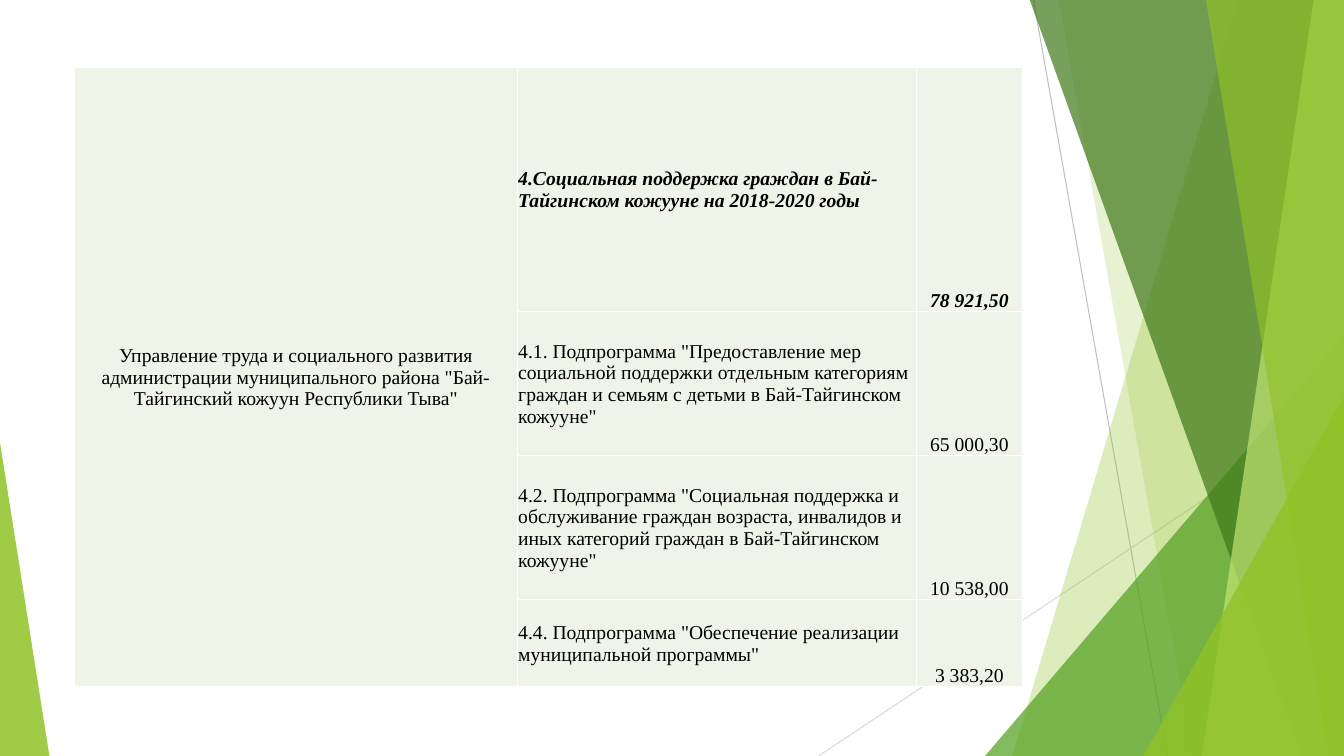
import pptx
import pptx.util
import pptx.dml.color
import pptx.enum.shapes
import pptx.enum.text
import pptx.oxml
import pptx.oxml.ns
from lxml import etree

Inches = pptx.util.Inches
Pt = pptx.util.Pt
RGB = pptx.dml.color.RGBColor.from_string
Anchor = pptx.enum.text.MSO_ANCHOR
Align = pptx.enum.text.PP_ALIGN
qn = pptx.oxml.ns.qn

COLORS = {
    "lime": "90C226", "green": "54A021", "dark": "3F7819", "pale": "C0E474",
    "gray": "BFBFBF", "light": "D9D9D9", "cell": "EEF4E8",
    "white": "FFFFFF", "black": "000000",
}
WIDE, HIGH = 13.33, 7.5

deck = pptx.Presentation()
deck.slide_width, deck.slide_height = Inches(WIDE), Inches(HIGH)
slide = deck.slides.add_slide(deck.slide_layouts[6])
shapes = slide.shapes


def paint(shape, color, alpha):
    """Give a shape a see-through fill with no line or shadow."""
    shape.shadow.inherit = False
    shape.line.fill.background()
    shape.fill.solid()
    shape.fill.fore_color.rgb = RGB(COLORS[color])
    tint = shape.fill._xPr.find(".//" + qn("a:srgbClr"))
    etree.SubElement(tint, qn("a:alpha")).set("val", str(alpha * 1000))


def fill_cell(cell, text, anchor, align, bold=False):
    cell.fill.solid()
    cell.fill.fore_color.rgb = RGB(COLORS["cell"])
    cell.vertical_anchor = anchor
    cell.margin_left = cell.margin_right = cell.margin_top = Inches(0.01)
    cell.margin_bottom = 0
    para = cell.text_frame.paragraphs[0]
    para.alignment = align
    run = para.add_run()
    run.text = text
    font = run.font
    font.name, font.size = "Times New Roman", Pt(14)
    font.bold = font.italic = bold
    font.color.rgb = RGB(COLORS["black"])


# Thin background lines
for x1, y1, x2, y2, color in [
    (10.25, 0, 11.58, HIGH, "gray"),
    (WIDE, 4.03, 8.12, HIGH, "light"),
]:
    line = shapes.add_connector(
        pptx.enum.shapes.MSO_CONNECTOR.STRAIGHT,
        Inches(x1), Inches(y1), Inches(x2), Inches(y2))
    line.line.color.rgb = RGB(COLORS[color])
    line.line.width = Pt(0.75)
    etree.SubElement(line._element.spPr, qn("a:effectLst"))

# Bands reach the right edge: top left x, bottom left x.
# Wedges stand on the bottom edge: left, top, width, apex.
facets = [
    ("band", (12.28, 10.04), "lime", 30),
    ("band", (10.5, 11.83), "lime", 20),
    ("wedge", (9.77, 3.33, 3.56, 1), "green", 72),
    ("band", (10.21, 12.91), "dark", 70),
    ("band", (13.03, 11.92), "pale", 70),
    ("band", (11.96, 13.18), "lime", 65),
    ("wedge", (11.34, 3.93, 1.99, 1), "lime", 80),
    ("wedge", (0, 4.39, 0.49, 0), "lime", 85),
]
for kind, dims, color, alpha in facets:
    if kind == "band":
        top, base = dims
        pen = shapes.build_freeform(Inches(top), Inches(-0.01))
        pen.add_line_segments([
            (Inches(x), Inches(y))
            for x, y in [(WIDE, -0.01), (WIDE, HIGH), (base, HIGH)]
        ], close=True)
        facet = pen.convert_to_shape()
    else:
        left, top, width, apex = dims
        facet = shapes.add_shape(
            pptx.enum.shapes.MSO_SHAPE.ISOSCELES_TRIANGLE,
            Inches(left), Inches(top), Inches(width), Inches(HIGH - top))
        facet.adjustments[0] = apex
    paint(facet, color, alpha)

# Programme table
office = ('Управление труда и социального развития администрации '
          'муниципального района "Бай-Тайгинский кожуун Республики Тыва"')
rows = [
    (2.42, "4.Социальная поддержка граждан в Бай-Тайгинском кожууне "
     "на 2018-2020 годы", "78 921,50"),
    (1.43, '4.1. Подпрограмма "Предоставление мер социальной поддержки '
     'отдельным категориям граждан и семьям с детьми в Бай-Тайгинском '
     'кожууне"', "65 000,30"),
    (1.43, '4.2. Подпрограмма "Социальная поддержка и обслуживание граждан '
     'возраста, инвалидов и иных категорий граждан в Бай-Тайгинском '
     'кожууне"', "10 538,00"),
    (0.86, '4.4. Подпрограмма "Обеспечение реализации муниципальной '
     'программы"', "3 383,20"),
]
table = shapes.add_table(
    len(rows), 3, Inches(0.74), Inches(0.67), Inches(9.4), Inches(6.15)).table
table.first_row = table.horz_banding = False
for col, width in zip(table.columns, [4.39, 3.96, 1.05]):
    col.width = Inches(width)

table.cell(0, 0).merge(table.cell(len(rows) - 1, 0))
fill_cell(table.cell(0, 0), office, Anchor.MIDDLE, Align.CENTER)
for i, (height, name, total) in enumerate(rows):
    table.rows[i].height = Inches(height)
    fill_cell(table.cell(i, 1), name, Anchor.MIDDLE, Align.LEFT, i == 0)
    fill_cell(table.cell(i, 2), total, Anchor.BOTTOM, Align.CENTER, i == 0)

# White borders go before the fill in each cell
for cell in table.iter_cells():
    props = cell._tc.get_or_add_tcPr()
    for i, side in enumerate(["lnL", "lnR", "lnT", "lnB"]):
        edge = etree.Element(qn("a:" + side), w=str(Pt(1)))
        solid = etree.SubElement(edge, qn("a:solidFill"))
        etree.SubElement(solid, qn("a:srgbClr"), val=COLORS["white"])
        props.insert(i, edge)

deck.save("out.pptx")
